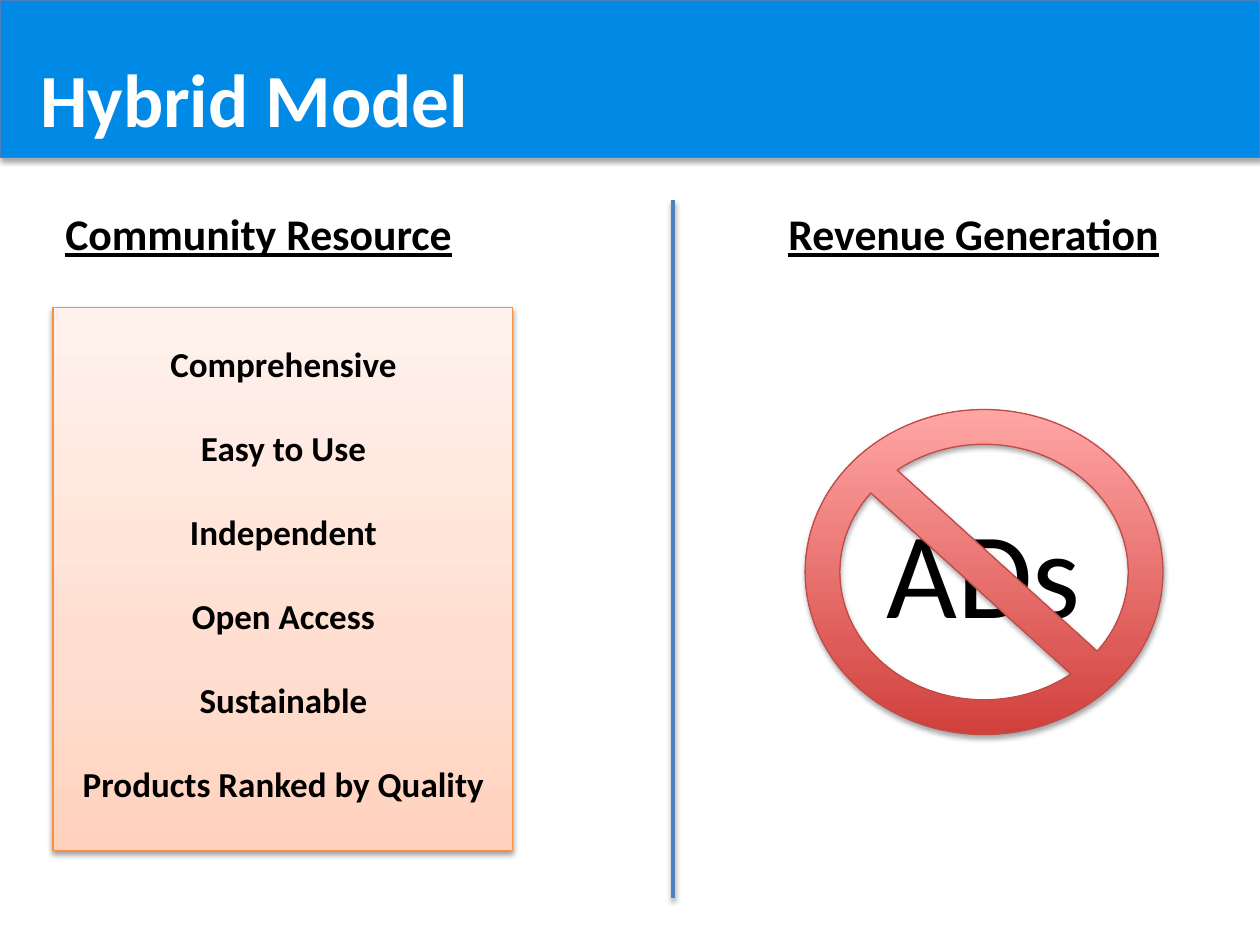
from dataclasses import dataclass

from lxml.etree import SubElement
from pptx import Presentation
from pptx.dml.color import RGBColor
from pptx.enum.shapes import MSO_CONNECTOR, MSO_SHAPE
from pptx.enum.text import MSO_ANCHOR, MSO_AUTO_SIZE, PP_ALIGN
from pptx.oxml.ns import qn
from pptx.util import Inches, Pt

COLORS = {
    "banner": "0089E5", "banner_line": "4B7EBC", "divider": "4F81BD",
    "panel_line": "F69240", "sign_line": "BF4C48",
    "title": "FFFFFF", "text": "000000", "shadow": "000000",
}
PANEL_STOPS = ((0, "FFD2BD"), (35, "FFDED0"), (100, "FFF2ED"))
SIGN_STOPS = ((0, "D1403C"), (100, "FFA6A5"))
QUALITIES = ("Comprehensive", "Easy to Use", "Independent", "Open Access",
             "Sustainable", "Products Ranked by Quality")
HEADING_FORMAT = {"size": Pt(25), "bold": True, "underline": True}


@dataclass
class Frame:
    left: float
    top: float
    width: float
    height: float

    def lengths(self):
        return [Inches(v) for v in (self.left, self.top, self.width, self.height)]


@dataclass
class Label:
    text: str
    frame: Frame
    font: dict


LABELS = (
    Label("Community Resource", Frame(0.42, 1.59, 4.08, 0.52), HEADING_FORMAT),
    Label("Revenue Generation", Frame(6.16, 1.59, 3.5, 0.52), HEADING_FORMAT),
    Label("ADs", Frame(6.94, 3.89, 2.89, 1.28), {"size": Pt(70)}),
)


def rgb(name: str) -> RGBColor:
    return RGBColor.from_string(COLORS[name])


def set_format(target, values: dict) -> None:
    for name, value in values.items():
        setattr(target, name, value)


def write(paragraph, text: str, font: dict, color: str = "text") -> None:
    span = paragraph.add_run()
    span.text = text
    set_format(span.font, {"name": "Calibri", **font})
    span.font.color.rgb = rgb(color)


def place(shape, frame: Frame) -> None:
    names = ("left", "top", "width", "height")
    set_format(shape, dict(zip(names, frame.lengths())))


def add_shadow(shape, opacity: int, distance: float) -> None:
    """Cast a soft shadow straight down."""
    effects = SubElement(shape._element.spPr, qn("a:effectLst"))
    shadow = SubElement(effects, qn("a:outerShdw"), blurRad=str(Pt(3.1)),
                        dist=str(Pt(distance)), dir="5400000", rotWithShape="0")
    color = SubElement(shadow, qn("a:srgbClr"), val=COLORS["shadow"])
    SubElement(color, qn("a:alpha"), val=str(opacity * 1000))


def add_outlined(page, kind: MSO_SHAPE, frame: Frame, line: str):
    shape = page.shapes.add_shape(kind, *frame.lengths())
    shape.line.color.rgb = rgb(line)
    shape.line.width = Pt(0.75)
    return shape


def fill_gradient(shape, stops: tuple) -> None:
    """Blend the stops from the bottom edge to the top."""
    shape.fill.gradient()
    shape.fill.gradient_angle = 90
    stop_list = shape._element.spPr.find(qn("a:gradFill")).find(qn("a:gsLst"))
    for stop in list(stop_list):
        stop_list.remove(stop)
    for position, color in stops:
        stop = SubElement(stop_list, qn("a:gs"), pos=str(position * 1000))
        SubElement(stop, qn("a:srgbClr"), val=color)


def send_to_back(page, shape) -> None:
    page.shapes._spTree.insert(2, shape._element)


def add_label(page, label: Label) -> None:
    box = page.shapes.add_textbox(*label.frame.lengths())
    box.text_frame.word_wrap = True
    write(box.text_frame.paragraphs[0], label.text, label.font)


def fill_title(title) -> None:
    place(title, Frame(0.22, 0.42, 9, 0.8))
    set_format(title.text_frame, {"vertical_anchor": MSO_ANCHOR.MIDDLE,
                                  "auto_size": MSO_AUTO_SIZE.NONE})
    paragraph = title.text_frame.paragraphs[0]
    set_format(paragraph, {"alignment": PP_ALIGN.LEFT, "line_spacing": 0.9})
    write(paragraph, "Hybrid Model", {"size": Pt(42.9), "bold": True}, "title")


def fill_qualities(body) -> None:
    place(body, Frame(-0.25, 2.67, 5, 3.8))
    frame = body.text_frame
    frame.auto_size = MSO_AUTO_SIZE.NONE
    for index, quality in enumerate(QUALITIES):
        paragraph = frame.add_paragraph() if index else frame.paragraphs[0]
        set_format(paragraph, {"alignment": PP_ALIGN.CENTER,
                               "space_before": Pt(0), "space_after": Pt(24)})
        properties = paragraph._p.get_or_add_pPr()
        properties.set("marL", "0")
        properties.set("indent", "0")
        SubElement(properties, qn("a:buNone"))
        write(paragraph, quality, {"size": Pt(20), "bold": True})


def main() -> None:
    deck = Presentation()
    deck.slide_width, deck.slide_height = Inches(10), Inches(7.5)
    page = deck.slides.add_slide(deck.slide_layouts[1])
    fill_title(page.shapes.title)
    fill_qualities(page.placeholders[1])

    panel = add_outlined(page, MSO_SHAPE.RECTANGLE,
                         Frame(0.42, 2.44, 3.65, 4.31), "panel_line")
    fill_gradient(panel, PANEL_STOPS)
    add_shadow(panel, 38, 1.6)
    send_to_back(page, panel)

    banner = add_outlined(page, MSO_SHAPE.RECTANGLE,
                          Frame(0, 0, 10, 1.25), "banner_line")
    banner.fill.solid()
    banner.fill.fore_color.rgb = rgb("banner")
    add_shadow(banner, 35, 1.8)
    send_to_back(page, banner)

    divider = page.shapes.add_connector(
        MSO_CONNECTOR.STRAIGHT, Inches(5.34), Inches(1.59), Inches(5.34), Inches(7.13))
    divider.line.color.rgb = rgb("divider")
    divider.line.width = Pt(2)
    add_shadow(divider, 38, 1.6)

    for label in LABELS:
        add_label(page, label)

    sign = add_outlined(page, MSO_SHAPE.NO_SYMBOL,
                        Frame(6.39, 3.25, 2.84, 2.58), "sign_line")
    sign.adjustments[0] = 0.107
    fill_gradient(sign, SIGN_STOPS)
    add_shadow(sign, 35, 1.8)

    deck.save("out.pptx")


if __name__ == "__main__":
    main()
